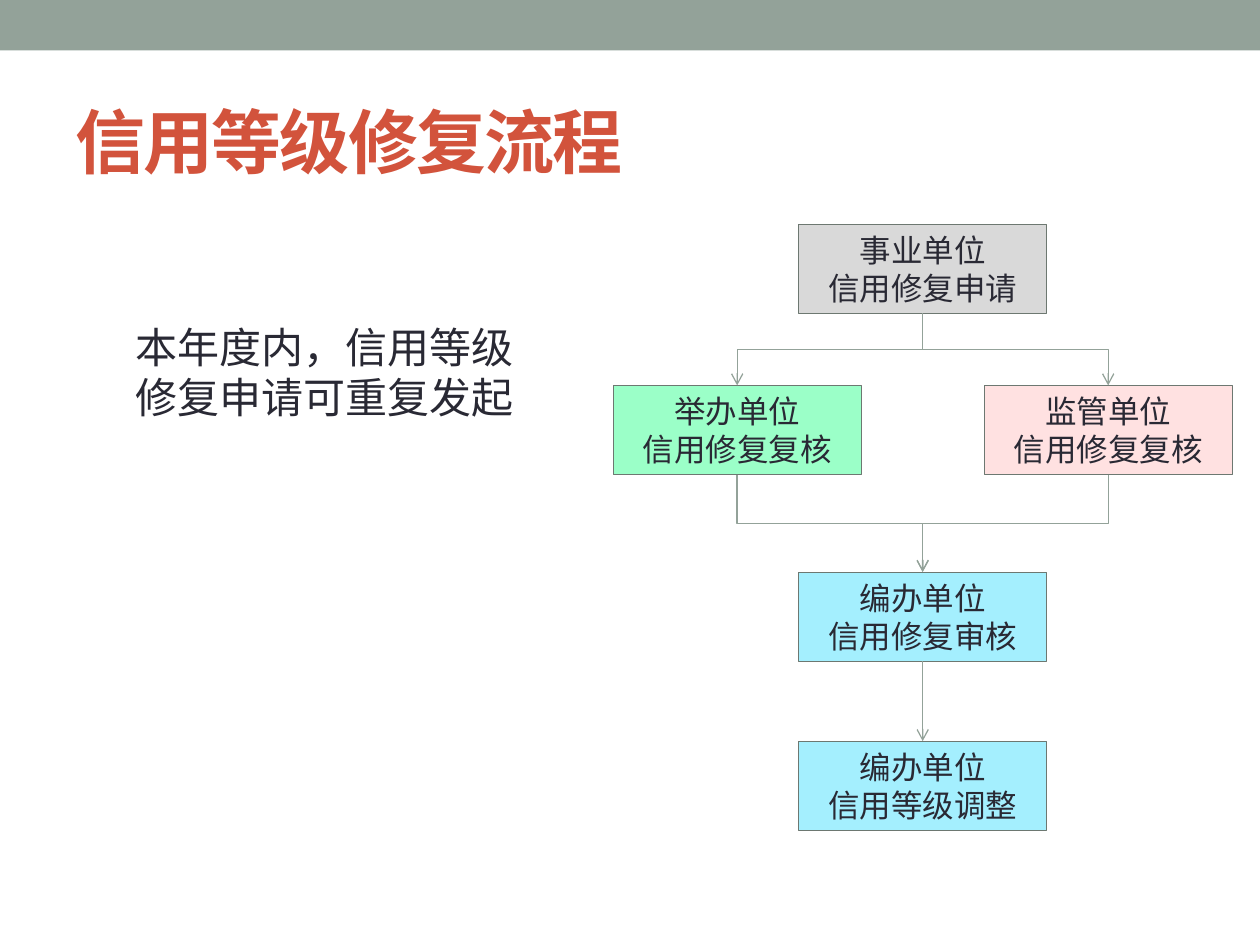
from lxml.etree import SubElement
from pptx import Presentation
from pptx.dml.color import RGBColor
from pptx.enum.shapes import MSO_CONNECTOR, MSO_SHAPE
from pptx.enum.text import MSO_ANCHOR, PP_ALIGN
from pptx.oxml.ns import qn
from pptx.util import Cm, Pt

FONT = "Noto Sans CJK SC"
SAGE = RGBColor(0x93, 0xA2, 0x99)
BORDER = RGBColor(0x6D, 0x78, 0x71)
RED = RGBColor(0xD2, 0x53, 0x3C)
INK = RGBColor(0x29, 0x29, 0x34)
GRAY = RGBColor(0xD9, 0xD9, 0xD9)
GREEN = RGBColor(0x9B, 0xFF, 0xC8)
PINK = RGBColor(0xFF, 0xE1, 0xE1)
CYAN = RGBColor(0xA4, 0xEF, 0xFE)

TITLE = "信用等级修复流程"
NOTE = "本年度内，信用等级修复申请可重复发起"
STEPS = {
    "apply": (0, 4.52, GRAY, ["事业单位", "信用修复申请"]),
    "sponsor": (-1, 7.77, GREEN, ["举办单位", "信用修复复核"]),
    "regulator": (1, 7.77, PINK, ["监管单位", "信用修复复核"]),
    "review": (0, 11.53, CYAN, ["编办单位", "信用修复审核"]),
    "adjust": (0, 14.94, CYAN, ["编办单位", "信用等级调整"]),
}
FLOWS = [
    ("apply", "sponsor"),
    ("apply", "regulator"),
    ("regulator", "review"),
    ("sponsor", "review"),
    ("review", "adjust"),
]
CENTER_X, COLUMN_STEP = 18.6, 3.74
BOX_W, BOX_H = 5, 1.8
TOP_SITE, BOTTOM_SITE = 0, 2


def write(sp, lines, size, color=INK, bold=False, align=PP_ALIGN.LEFT,
          anchor=MSO_ANCHOR.TOP, spacing=0):
    tf = sp.text_frame
    tf.word_wrap = True
    tf.vertical_anchor = anchor
    for i, line in enumerate(lines):
        p = tf.paragraphs[0] if i == 0 else tf.add_paragraph()
        p.alignment = align
        r = p.add_run()
        r.text = line
        r.font.size = Pt(size)
        r.font.bold = bold
        r.font.color.rgb = color
        r.font.name = FONT
        rPr = r.font._element
        SubElement(rPr, qn("a:ea"), typeface=FONT)
        if spacing:
            rPr.set("spc", str(spacing * 100))


def add_block(s, kind, left, top, width, height, fill, border=None):
    sp = s.shapes.add_shape(kind, Cm(left), Cm(top), Cm(width), Cm(height))
    sp.shadow.inherit = False
    sp.fill.solid()
    sp.fill.fore_color.rgb = fill
    if border is None:
        sp.line.fill.background()
    else:
        sp.line.color.rgb = border
        sp.line.width = Pt(0.25)
    return sp


def add_flow(s, source, target):
    x1, y1 = source.left + source.width // 2, source.top + source.height
    x2, y2 = target.left + target.width // 2, target.top
    kind = MSO_CONNECTOR.STRAIGHT if x1 == x2 else MSO_CONNECTOR.ELBOW
    cxn = s.shapes.add_connector(kind, x1, y1, x2, y2)
    cxn.begin_connect(source, BOTTOM_SITE)
    cxn.end_connect(target, TOP_SITE)
    spPr = cxn._element.spPr
    if x1 != x2:
        span, drop = abs(x2 - x1), y2 - y1
        cxn.left, cxn.top = (x1 + x2 - drop) // 2, (y1 + y2 - span) // 2
        cxn.width, cxn.height = drop, span
        rightward = x2 > x1
        spPr.xfrm.set("rot", str((270 if rightward else 90) * 60000))
        spPr.xfrm.set("flipH", "1" if rightward else "0")
    cxn.line.color.rgb = SAGE
    cxn.line.width = Pt(0.75)
    SubElement(cxn.line._get_or_add_ln(), qn("a:tailEnd"), type="arrow")
    SubElement(spPr, qn("a:effectLst"))


def main():
    prs = Presentation()
    prs.slide_width, prs.slide_height = Cm(25.4), Cm(19.05)
    s = prs.slides.add_slide(prs.slide_layouts[6])

    add_block(s, MSO_SHAPE.RECTANGLE, 0, 0, 25.4, 1.02, SAGE)
    title = s.shapes.add_textbox(Cm(1.27), Cm(1.47), Cm(22.86), Cm(2.74))
    write(title, [TITLE], 40, color=RED, bold=True, anchor=MSO_ANCHOR.MIDDLE, spacing=-1)
    note = s.shapes.add_textbox(Cm(2.49), Cm(6.35), Cm(8.79), Cm(2.31))
    write(note, [NOTE], 24)

    boxes = {}
    for name, (column, top, fill, lines) in STEPS.items():
        left = CENTER_X + column * COLUMN_STEP - BOX_W / 2
        sp = add_block(s, MSO_SHAPE.FLOWCHART_PROCESS, left, top, BOX_W, BOX_H, fill, BORDER)
        write(sp, lines, 18, align=PP_ALIGN.CENTER, anchor=MSO_ANCHOR.MIDDLE)
        boxes[name] = sp
    for source, target in FLOWS:
        add_flow(s, boxes[source], boxes[target])

    prs.save("out.pptx")


if __name__ == "__main__":
    main()
